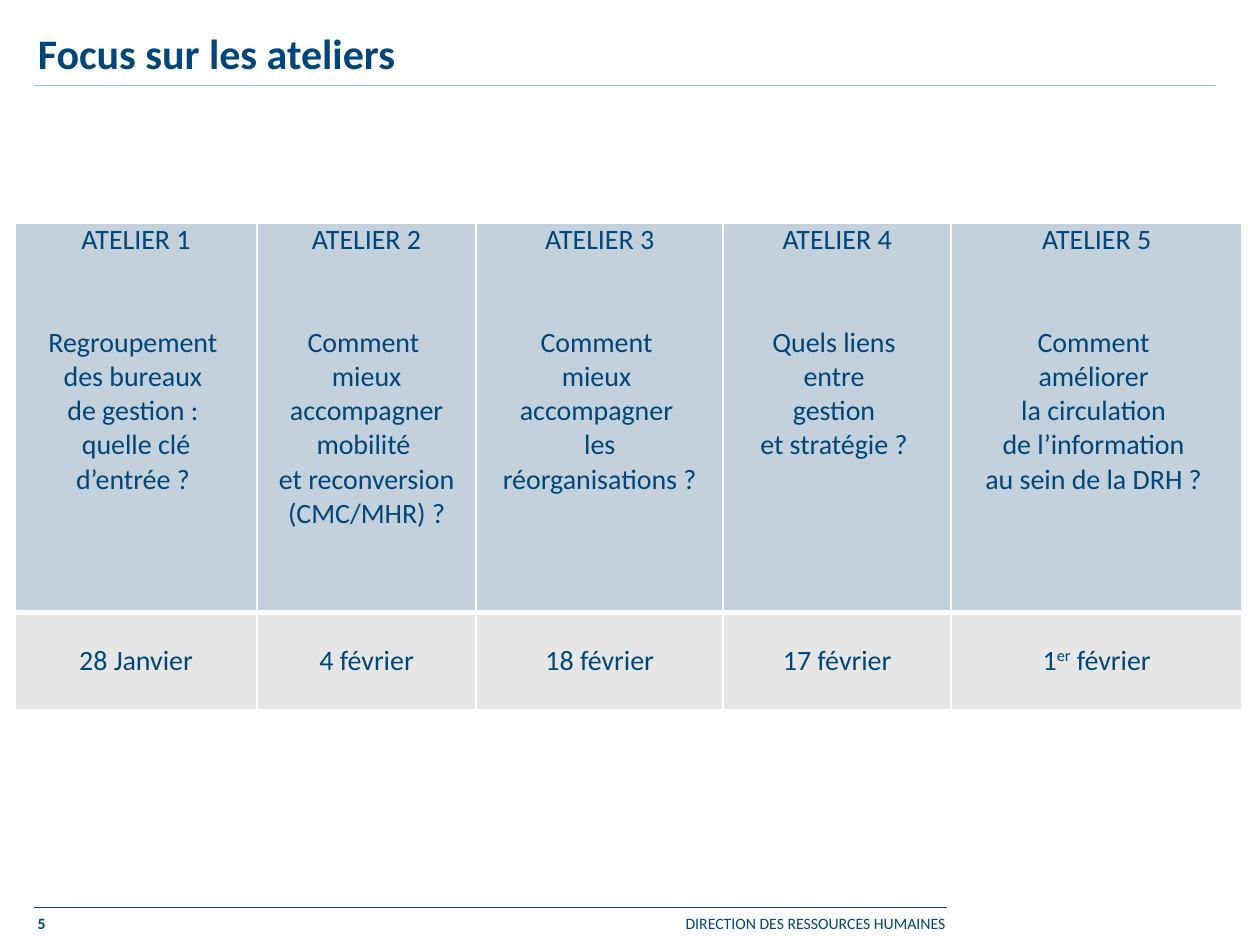
from lxml.etree import SubElement
from pptx import Presentation
from pptx.dml.color import RGBColor
from pptx.enum.shapes import MSO_CONNECTOR
from pptx.enum.text import MSO_ANCHOR as Anchor, MSO_AUTO_SIZE as AutoSize, PP_ALIGN as Align
from pptx.oxml.ns import qn
from pptx.util import Inches, Pt

NAVY = RGBColor(0x00, 0x46, 0x7A)
TEAL = RGBColor(0x8A, 0xC6, 0xCD)
PALE_BLUE = RGBColor(0xC2, 0xD1, 0xDC)
PALE_GREY = RGBColor(0xE6, 0xE6, 0xE6)
WHITE = RGBColor(0xFF, 0xFF, 0xFF)

COLUMN_WIDTHS = [1.92, 1.74, 1.96, 1.81, 2.31]
ROW_HEIGHTS = [3.09, 0.77]
QUESTIONS = [
    "Regroupement \ndes bureaux \nde gestion : \nquelle clé d’entrée ? ",
    "Comment \nmieux accompagner mobilité \net reconversion (CMC/MHR) ?",
    "Comment \nmieux \naccompagner \nles réorganisations ?",
    "Quels liens \nentre \ngestion \net stratégie ? ",
    "Comment \naméliorer \nla circulation \nde l’information \nau sein de la DRH ? ",
]
# Each date is a list of runs; the second run, if any, is a superscript
DATES = [["28 Janvier"], ["4 février"], ["18 février"], ["17 février"],
         ["1", "er", " février"]]


class SlideBuilder:
    font_name = "Calibri"

    def __init__(self, slide):
        self.slide = slide

    def format_paragraph(self, paragraph, size, bold=False, align=Align.LEFT):
        paragraph.alignment = align
        for run in paragraph.runs:
            font = run.font
            font.name, font.size, font.bold = self.font_name, Pt(size), bold
            font.color.rgb = NAVY
        for line_break in paragraph._p.findall(qn("a:br")):
            SubElement(line_break, qn("a:rPr"), sz=str(size * 100))

    def title(self, text, left, top, width, height):
        shape = self.slide.shapes.title
        shape.left, shape.top = Inches(left), Inches(top)
        shape.width, shape.height = Inches(width), Inches(height)
        frame = shape.text_frame
        frame.text = text
        frame.auto_size = AutoSize.NONE
        frame.vertical_anchor = Anchor.MIDDLE
        self.format_paragraph(frame.paragraphs[0], 24, bold=True)

    def text(self, text, left, top, width, height, **style):
        box = self.slide.shapes.add_textbox(
            Inches(left), Inches(top), Inches(width), Inches(height))
        frame = box.text_frame
        frame.word_wrap = True
        frame.text = text
        self.format_paragraph(frame.paragraphs[0], 9, **style)

    def rule(self, left, right, top, color):
        line = self.slide.shapes.add_connector(
            MSO_CONNECTOR.STRAIGHT, Inches(left), Inches(top), Inches(right), Inches(top))
        line.line.color.rgb = color
        line.line.width = Pt(0.75)
        SubElement(line._element.spPr, qn("a:effectLst"))

    def table(self, left, top, column_widths, row_heights):
        """Add an unstyled table and return it."""
        frame = self.slide.shapes.add_table(
            len(row_heights), len(column_widths), Inches(left), Inches(top),
            Inches(sum(column_widths)), Inches(sum(row_heights)))
        table = frame.table
        table.first_row = table.horz_banding = False
        for column, width in zip(table.columns, column_widths):
            column.width = Inches(width)
        for row, height in zip(table.rows, row_heights):
            row.height = Inches(height)
        return table

    def style_cell(self, cell, fill, anchor, top_border=1, bottom_border=1):
        cell.margin_left = cell.margin_right = Inches(0.07)
        cell.margin_top = cell.margin_bottom = 0
        cell.vertical_anchor = anchor
        properties = cell._tc.get_or_add_tcPr()
        borders = {"a:lnL": 1, "a:lnR": 1, "a:lnT": top_border, "a:lnB": bottom_border}
        for tag, width in borders.items():
            border = SubElement(properties, qn(tag), w=str(Pt(width)))
            solid = SubElement(border, qn("a:solidFill"))
            SubElement(solid, qn("a:srgbClr"), val=str(WHITE))
        cell.fill.solid()
        cell.fill.fore_color.rgb = fill
        for paragraph in cell.text_frame.paragraphs:
            self.format_paragraph(paragraph, 16, align=Align.CENTER)

    def workshop_cell(self, cell, heading, question):
        frame = cell.text_frame
        frame.text = heading
        paragraph = frame.add_paragraph()
        paragraph.text = question
        paragraph.space_before = Pt(39)
        self.style_cell(cell, PALE_BLUE, Anchor.TOP, bottom_border=3)

    def date_cell(self, cell, parts):
        paragraph = cell.text_frame.paragraphs[0]
        for index, part in enumerate(parts):
            run = paragraph.add_run()
            run.text = part
            if index == 1:
                run.font._element.set("baseline", "30000")
        self.style_cell(cell, PALE_GREY, Anchor.MIDDLE, top_border=3)


def main():
    presentation = Presentation()
    presentation.slide_width, presentation.slide_height = Inches(10), Inches(7.5)
    builder = SlideBuilder(presentation.slides.add_slide(presentation.slide_layouts[5]))

    builder.rule(0.27, 9.65, 0.68, TEAL)
    builder.text("DIRECTION DES RESSOURCES HUMAINES", 4.84, 7.2, 2.76, 0.25, align=Align.RIGHT)
    builder.rule(0.27, 7.52, 7.2, NAVY)
    builder.text("5", 0.2, 7.2, 0.98, 0.24, bold=True)
    builder.title("Focus sur les ateliers", 0.2, 0.28, 9.45, 0.28)

    table = builder.table(0.12, 1.77, COLUMN_WIDTHS, ROW_HEIGHTS)
    for column, (question, date) in enumerate(zip(QUESTIONS, DATES)):
        builder.workshop_cell(table.cell(0, column), f"ATELIER {column + 1}", question)
        builder.date_cell(table.cell(1, column), date)

    presentation.save("out.pptx")


if __name__ == "__main__":
    main()
